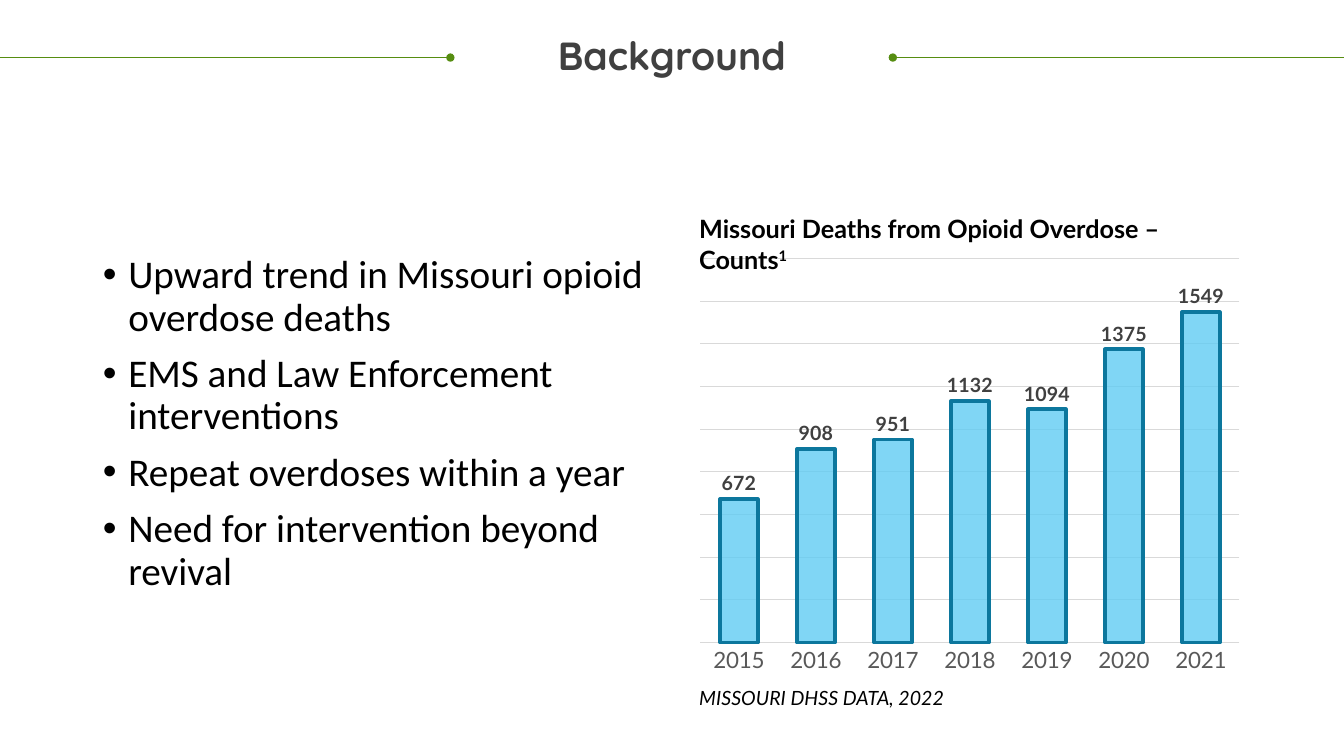
from dataclasses import dataclass
from typing import Any

from pptx import Presentation
from pptx import util as u
from pptx.chart import data as cd
from pptx.dml.color import RGBColor
from pptx.enum import chart as ch
from pptx.enum import shapes, text
from pptx.oxml import ns
from lxml import etree

BLACK = RGBColor(0x00, 0x00, 0x00)
DARK = RGBColor(0x40, 0x40, 0x40)
GREY = RGBColor(0x59, 0x59, 0x59)
PALE = RGBColor(0xD9, 0xD9, 0xD9)
GREEN = RGBColor(0x56, 0x8D, 0x11)
SKY = RGBColor(0x5E, 0xCC, 0xF3)
BLUE = RGBColor(0x0C, 0x77, 0x9D)

RULE_Y = 1.45
LEFT = 17.37
TOP = 6.3
WIDTH = 14.15
HEIGHT = 10.87

POINTS = [
    "Upward trend in Missouri opioid overdose deaths",
    "EMS and Law Enforcement interventions",
    "Repeat overdoses within a year",
    "Need for intervention beyond revival",
]
DEATHS = {
    "2015": 672, "2016": 908, "2017": 951, "2018": 1132,
    "2019": 1094, "2020": 1375, "2021": 1549,
}


@dataclass
class Rule:
    start: float
    stop: float
    dot: str


@dataclass
class Note:
    words: str
    box: tuple[float, float, float, float]
    font: dict[str, Any]
    mark: str = ""


RULES = [Rule(22.5, 33.87, "headEnd"), Rule(0, 11.35, "tailEnd")]
NOTES = [
    Note("Missouri Deaths from Opioid Overdose – Counts", (LEFT, 5.26, WIDTH, 1.02),
         {"name": "Lato", "size": u.Pt(18), "bold": True}, "1"),
    Note("MISSOURI DHSS DATA, 2022", (LEFT, 17.17, 13.46, 0.86),
         {"name": "Lato", "size": u.Pt(14), "italic": True}),
]


def put(thing: Any, values: dict[str, Any]) -> None:
    for key, value in values.items():
        setattr(thing, key, value)


def ink(font: Any, color: RGBColor, values: dict[str, Any]) -> None:
    put(font, values)
    font.color.rgb = color


def place(shape: Any, box: tuple[float, float, float, float]) -> None:
    sides = ("left", "top", "width", "height")
    put(shape, {side: u.Cm(size) for side, size in zip(sides, box)})


def stroke(line: Any, color: RGBColor, width: float) -> None:
    line.color.rgb = color
    line.width = u.Pt(width)


def draw_rule(slide: Any, rule: Rule) -> None:
    line = slide.shapes.add_connector(
        shapes.MSO_CONNECTOR.STRAIGHT,
        u.Cm(rule.start), u.Cm(RULE_Y), u.Cm(rule.stop), u.Cm(RULE_Y))
    stroke(line.line, GREEN, 0.5)
    etree.SubElement(line.line._ln, ns.qn(f"a:{rule.dot}"), type="oval")
    etree.SubElement(line._element.spPr, ns.qn("a:effectLst"))


def draw_title(slide: Any) -> None:
    title = slide.shapes.title
    place(title, (0.64, 0.91, 32.58, 1.07))
    frame = title.text_frame
    frame.text = "Background"
    put(frame, {"margin_left": 0, "margin_top": 0, "margin_right": 0,
                "margin_bottom": 0, "word_wrap": True,
                "auto_size": text.MSO_AUTO_SIZE.SHAPE_TO_FIT_TEXT})
    para = frame.paragraphs[0]
    put(para, {"alignment": text.PP_ALIGN.CENTER, "line_spacing": 0.9})
    ink(para.runs[0].font, DARK,
        {"name": "Quicksand", "size": u.Pt(28), "bold": True})


def draw_points(slide: Any) -> None:
    body = slide.placeholders[1]
    place(body, (2.34, TOP, 14.17, HEIGHT))
    frame = body.text_frame
    frame.text = "\n".join(POINTS)
    frame.auto_size = text.MSO_AUTO_SIZE.NONE
    for para in frame.paragraphs:
        put(para, {"line_spacing": 0.9, "space_before": u.Pt(10)})
        props = para._p.get_or_add_pPr()
        props.set("marL", str(u.Cm(0.64)))
        props.set("indent", str(u.Cm(-0.64)))
        etree.SubElement(props, ns.qn("a:buFont"), typeface="Arial")
        etree.SubElement(props, ns.qn("a:buChar"), char="•")
        ink(para.runs[0].font, BLACK, {"name": "Calibri", "size": u.Pt(28)})


def draw_note(slide: Any, note: Note) -> None:
    frame = slide.shapes.add_textbox(*map(u.Cm, note.box)).text_frame
    put(frame, {"word_wrap": True,
                "auto_size": text.MSO_AUTO_SIZE.SHAPE_TO_FIT_TEXT})
    for words in filter(None, (note.words, note.mark)):
        run = frame.paragraphs[0].add_run()
        run.text = words
        ink(run.font, BLACK, note.font)
        if words == note.mark:
            run.font._element.set("baseline", "30000")


def draw_chart(slide: Any) -> None:
    data = cd.CategoryChartData()
    data.categories = list(DEATHS)
    data.add_series("Series 1", list(DEATHS.values()))
    chart = slide.shapes.add_chart(
        ch.XL_CHART_TYPE.COLUMN_CLUSTERED,
        u.Cm(LEFT), u.Cm(TOP), u.Cm(WIDTH), u.Cm(HEIGHT), data).chart
    put(chart, {"has_title": False, "has_legend": False})
    ink(chart.font, BLACK, {"name": "Lato", "size": u.Pt(10)})

    years = chart.category_axis
    put(years, {"major_tick_mark": ch.XL_TICK_MARK.NONE,
                "minor_tick_mark": ch.XL_TICK_MARK.NONE,
                "has_major_gridlines": False})
    ink(years.tick_labels.font, GREY, {"name": "Lato", "size": u.Pt(16)})
    stroke(years.format.line, PALE, 0.75)

    counts = chart.value_axis
    put(counts, {"visible": False, "has_major_gridlines": True,
                 "minimum_scale": 0, "maximum_scale": 1800, "major_unit": 200})
    stroke(counts.major_gridlines.format.line, PALE, 0.75)

    plot = chart.plots[0]
    put(plot, {"gap_width": 103, "overlap": -6, "vary_by_categories": False})
    bars = plot.series[0]
    bars.format.fill.solid()
    bars.format.fill.fore_color.rgb = SKY
    tint = bars._element.spPr.find(f".//{ns.qn('a:srgbClr')}")
    etree.SubElement(tint, ns.qn("a:alpha"), val="79000")
    stroke(bars.format.line, BLUE, 2.5)

    labels = bars.data_labels
    put(labels, {"show_value": True,
                 "position": ch.XL_LABEL_POSITION.OUTSIDE_END})
    ink(labels.font, DARK, {"name": "Lato", "size": u.Pt(14), "bold": True})


def main() -> None:
    deck = Presentation()
    put(deck, {"slide_width": u.Cm(33.87), "slide_height": u.Cm(19.05)})
    slide = deck.slides.add_slide(deck.slide_layouts[1])
    draw_title(slide)
    for rule in RULES:
        draw_rule(slide, rule)
    draw_points(slide)
    draw_chart(slide)
    for note in NOTES:
        draw_note(slide, note)
    deck.save("out.pptx")


if __name__ == "__main__":
    main()
